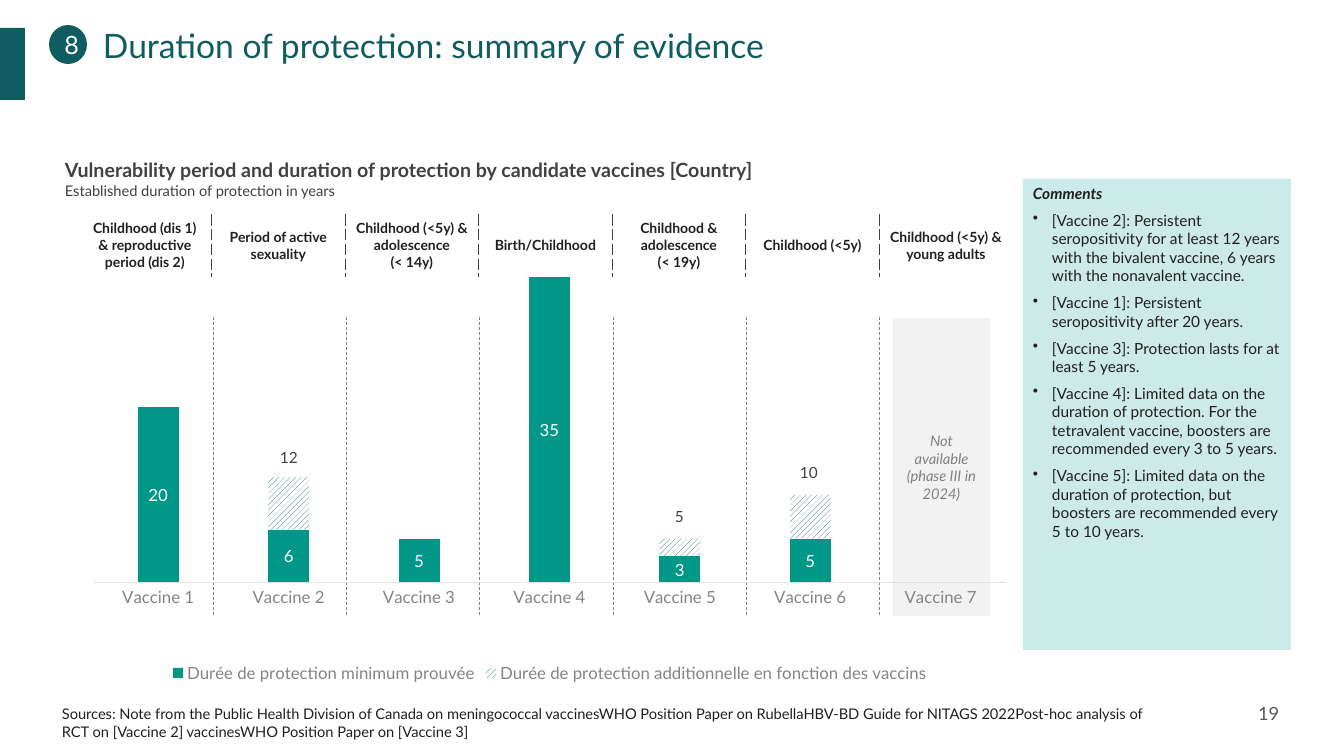
from dataclasses import dataclass

from lxml.etree import SubElement
from pptx import Presentation
from pptx.chart.data import CategoryChartData
from pptx.dml.color import RGBColor
from pptx.enum.chart import XL_CHART_TYPE, XL_LEGEND_POSITION, XL_TICK_MARK
from pptx.enum.dml import MSO_LINE, MSO_PATTERN
from pptx.enum.shapes import MSO_CONNECTOR, MSO_SHAPE
from pptx.enum.text import MSO_ANCHOR, PP_ALIGN
from pptx.oxml import parse_xml
from pptx.oxml.ns import nsdecls, qn
from pptx.util import Pt

EMU_PER_PX = 914400 / 100.8


@dataclass(frozen=True)
class Theme:
    font: str = "Lato"
    petrol: str = "0F5D61"
    teal: str = "009688"
    ink: str = "202020"
    slate: str = "414141"
    page: str = "595959"
    grey: str = "808080"
    axis_text: str = "848484"
    axis_line: str = "E2E2E2"
    panel: str = "F2F2F2"
    white: str = "FFFFFF"
    title: float = 24
    badge: float = 18
    heading: float = 14
    folio: float = 13
    chart: float = 12
    body: float = 11
    small: float = 10.5
    header: float = 10


def px(length):
    return round(length * EMU_PER_PX)


def rgb(colour):
    return RGBColor.from_string(colour)


class SlideBuilder:
    def __init__(self, slide, theme):
        self.slide = slide
        self.theme = theme

    def style(self, font, size, colour, bold=False, italic=False):
        font.name = self.theme.font
        font.size = Pt(size)
        font.color.rgb = rgb(colour)
        font.bold = bold
        font.italic = italic

    def fill_text(self, frame, lines, size, colour, bold=False, italic=False,
                  align=PP_ALIGN.LEFT, anchor=MSO_ANCHOR.TOP, wrap=True, inset=None):
        frame.word_wrap = wrap
        frame.vertical_anchor = anchor
        if inset is not None:
            frame.margin_left = frame.margin_right = px(inset)
            frame.margin_top = frame.margin_bottom = px(inset)
        for index, line in enumerate(lines):
            paragraph = frame.paragraphs[0] if index == 0 else frame.add_paragraph()
            paragraph.alignment = align
            run = paragraph.add_run()
            run.text = line
            self.style(run.font, size, colour, bold, italic)
        return frame

    def text(self, x, y, w, h, lines, size, colour, **options):
        box = self.slide.shapes.add_textbox(px(x), px(y), px(w), px(h))
        return self.fill_text(box.text_frame, lines, size, colour, **options)

    def shape(self, preset, x, y, w, h, colour, alpha=None):
        shape = self.slide.shapes.add_shape(preset, px(x), px(y), px(w), px(h))
        shape.shadow.inherit = False
        shape.fill.solid()
        shape.fill.fore_color.rgb = rgb(colour)
        shape.line.fill.background()
        if alpha is not None:
            fill_colour = shape.element.spPr.find(qn("a:solidFill"))[0]
            SubElement(fill_colour, qn("a:alpha"), val=str(alpha * 1000))
        return shape.text_frame

    def divider(self, x, top, bottom):
        line = self.slide.shapes.add_connector(
            MSO_CONNECTOR.STRAIGHT, px(x), px(top), px(x), px(bottom))
        line.line.color.rgb = rgb(self.theme.grey)
        line.line.width = Pt(0.5)
        line.line.dash_style = MSO_LINE.DASH
        SubElement(line.element.spPr, qn("a:effectLst"))

    def bullets(self, frame, lines, size, colour, indent):
        for line in lines:
            paragraph = frame.add_paragraph()
            paragraph.alignment = PP_ALIGN.LEFT
            paragraph.space_before = Pt(6)
            properties = paragraph._p.get_or_add_pPr()
            properties.set("marL", str(px(indent)))
            properties.set("indent", str(-px(indent)))
            SubElement(properties, qn("a:buChar"), char="•")
            run = paragraph.add_run()
            run.text = line
            self.style(run.font, size, colour)

    def borders(self, cell, edges):
        properties = cell._tc.get_or_add_tcPr()
        for index, (side, (colour, width, dash)) in enumerate(edges.items()):
            properties.insert(index, parse_xml(
                f'<a:ln{side} {nsdecls("a")} w="{Pt(width)}"><a:solidFill>'
                f'<a:srgbClr val="{colour}"/></a:solidFill>'
                f'<a:prstDash val="{dash}"/></a:ln{side}>'))

    def header_table(self, x, y, w, h, headers):
        theme = self.theme
        table = self.slide.shapes.add_table(
            1, len(headers), px(x), px(y), px(w), px(h)).table
        table.first_row = table.horz_banding = False
        dashed = (theme.slate, 0.5, "sysDash")
        plain = (theme.white, 1, "solid")
        last = len(headers) - 1
        for index, lines in enumerate(headers):
            table.columns[index].width = px(w / len(headers))
            cell = table.cell(0, index)
            cell.fill.solid()
            cell.fill.fore_color.rgb = rgb(theme.white)
            cell.vertical_anchor = MSO_ANCHOR.MIDDLE
            self.fill_text(cell.text_frame, lines, theme.header, theme.ink, bold=True,
                           align=PP_ALIGN.CENTER, anchor=MSO_ANCHOR.MIDDLE)
            self.borders(cell, {"L": dashed if index else plain,
                                "R": dashed if index < last else plain,
                                "T": plain, "B": (theme.white, 3, "solid")})

    def stacked_chart(self, x, y, w, h, categories, proven, additional, layout):
        theme = self.theme
        data = CategoryChartData(number_format="#,##0")
        data.categories = categories
        data.add_series("Durée de protection minimum prouvée", proven)
        data.add_series("Durée de protection additionnelle en fonction des vaccins", additional)
        chart = self.slide.shapes.add_chart(
            XL_CHART_TYPE.COLUMN_STACKED, px(x), px(y), px(w), px(h), data).chart
        self.style(chart.font, theme.chart, theme.slate)
        chart.has_title = False
        chart.has_legend = True
        chart.legend.position = XL_LEGEND_POSITION.BOTTOM
        chart.legend.include_in_layout = False
        self.style(chart.legend.font, theme.chart, theme.axis_text)
        years = chart.value_axis
        years.visible = years.has_major_gridlines = False
        years.minimum_scale, years.maximum_scale = 0, 40
        vaccines = chart.category_axis
        vaccines.major_tick_mark = vaccines.minor_tick_mark = XL_TICK_MARK.NONE
        vaccines.format.line.color.rgb = rgb(theme.axis_line)
        vaccines.format.line.width = Pt(0.75)
        self.style(vaccines.tick_labels.font, theme.chart, theme.axis_text)
        plot = chart.plots[0]
        plot.gap_width, plot.overlap, plot.vary_by_categories = 219, 100, False
        minimum, extra = plot.series
        minimum.format.fill.solid()
        minimum.format.fill.fore_color.rgb = rgb(theme.teal)
        minimum.data_labels.show_value = True
        minimum.data_labels.number_format = "#,##0"
        minimum.data_labels.number_format_is_linked = False
        self.style(minimum.data_labels.font, theme.chart, theme.white)
        hatch = extra.format.fill
        hatch.patterned()
        hatch.pattern = MSO_PATTERN.WIDE_UPWARD_DIAGONAL
        hatch.fore_color.rgb = rgb(theme.petrol)
        hatch.back_color.rgb = rgb(theme.white)
        area = chart.element.find(".//" + qn("c:plotArea"))
        for automatic in area.findall(qn("c:layout")):
            area.remove(automatic)
        settings = {"layoutTarget": "inner", "xMode": "edge", "yMode": "edge",
                    **dict(zip("xywh", layout))}
        values = "".join(f'<c:{key} val="{value}"/>' for key, value in settings.items())
        area.insert(0, parse_xml(f'<c:layout {nsdecls("c")}><c:manualLayout>{values}'
                                 '</c:manualLayout></c:layout>'))


def main():
    theme = Theme()
    deck = Presentation()
    deck.slide_width, deck.slide_height = px(1344), px(756)
    page = SlideBuilder(deck.slides.add_slide(deck.slide_layouts[6]), theme)
    centred = {"align": PP_ALIGN.CENTER, "anchor": MSO_ANCHOR.MIDDLE}

    unavailable = page.shape(MSO_SHAPE.RECTANGLE, 893, 318, 97, 298, theme.panel)
    page.fill_text(unavailable, ["Not available (phase III in 2024)"], theme.small, theme.grey,
                   italic=True, **centred)
    for index in range(6):
        page.divider(round(213 + 133.2 * index), 317, 616)

    page.shape(MSO_SHAPE.RECTANGLE, -1, 28, 26, 72, theme.petrol)
    page.text(103, 25, 1214, 81, ["Duration of protection: summary of evidence"],
              theme.title, theme.petrol, inset=0)
    page.text(1245, 685, 81, 57, ["19"], theme.folio, theme.page,
              anchor=MSO_ANCHOR.MIDDLE, inset=13)
    page.text(52, 703, 1122, 39, [
        "Sources: Note from the Public Health Division of Canada on meningococcal vaccines"
        "WHO Position Paper on RubellaHBV-BD Guide for NITAGS 2022Post-hoc analysis of "
        "RCT on [Vaccine 2] vaccinesWHO Position Paper on [Vaccine 3]"],
        theme.small, theme.ink, anchor=MSO_ANCHOR.MIDDLE)
    badge = page.shape(MSO_SHAPE.OVAL, 49, 25, 38, 39, theme.petrol)
    page.fill_text(badge, ["8"], theme.badge, theme.white, **centred)

    heading = page.text(55, 153, 782, 51, [
        "Vulnerability period and duration of protection by candidate vaccines [Country]",
        "Established duration of protection in years"], theme.heading, theme.slate, bold=True)
    page.style(heading.paragraphs[1].runs[0].font, theme.small, theme.slate)

    page.stacked_chart(78, 216, 944, 471, [f"Vaccine {n}" for n in range(1, 8)],
                       [20, 6, 5, 35, 3, 5, None], [None, 6, None, None, 2, 5, None],
                       (0.016, 0.035, 0.967, 0.743))
    page.header_table(78, 215, 935, 60, [
        ["Childhood (dis 1) & reproductive period (dis 2)"],
        ["Period of active sexuality"],
        ["Childhood (<5y) & adolescence", "(< 14y)"],
        ["Birth/Childhood"],
        ["Childhood & adolescence", "(< 19y)"],
        ["Childhood (<5y)"],
        ["Childhood (<5y) & young adults"]])

    comments = page.shape(MSO_SHAPE.RECTANGLE, 1023, 179, 268, 471, theme.teal, alpha=20)
    page.fill_text(comments, ["Comments"], theme.body, theme.ink, bold=True, italic=True)
    comments.paragraphs[0].space_before = Pt(6)
    page.bullets(comments, [
        "[Vaccine 2]: Persistent seropositivity for at least 12 years with the bivalent "
        "vaccine, 6 years with the nonavalent vaccine.",
        "[Vaccine 1]: Persistent seropositivity after 20 years.",
        "[Vaccine 3]: Protection lasts for at least 5 years.",
        "[Vaccine 4]: Limited data on the duration of protection. For the tetravalent "
        "vaccine, boosters are recommended every 3 to 5 years.",
        "[Vaccine 5]: Limited data on the duration of protection, but boosters are "
        "recommended every 5 to 10 years."], theme.body, theme.ink, 19)

    for total, x, y, w in (("12", 270, 443, 38), ("10", 790, 458, 38), ("5", 665, 502, 29)):
        page.text(x, y, w, 29, [total], theme.body, theme.slate, wrap=False)

    deck.save("out.pptx")


if __name__ == "__main__":
    main()
